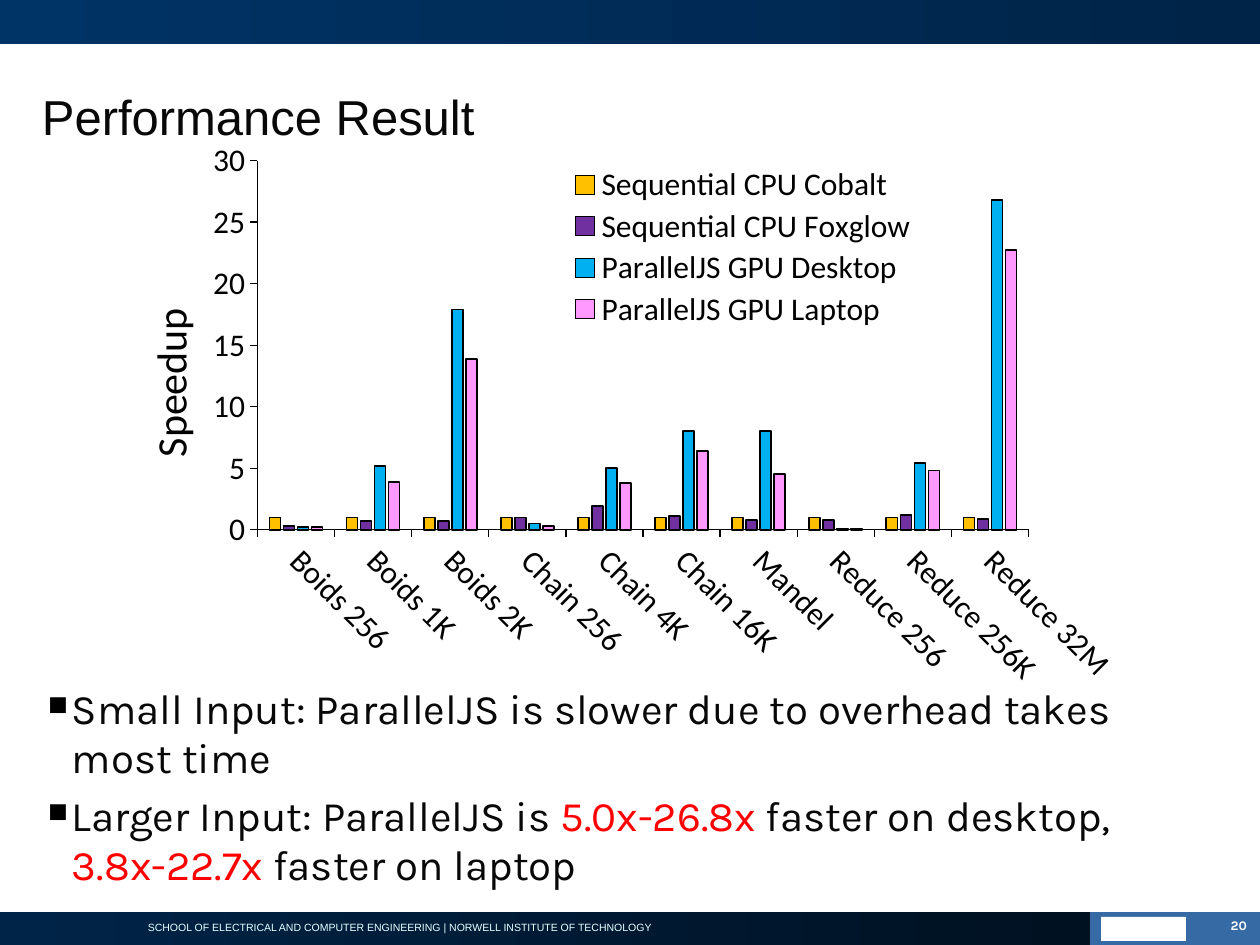
import dataclasses

import lxml.etree
import pptx
import pptx.chart.data
import pptx.dml.color
import pptx.enum.chart
import pptx.enum.shapes
import pptx.enum.text
import pptx.oxml.ns
import pptx.util

qn = pptx.oxml.ns.qn
EMU_PER_PX = 914400 / 126


@dataclasses.dataclass(frozen=True)
class Theme:
    text_font: str = "Karla"
    title_font: str = "Arial"
    chart_font: str = "Calibri"
    ink: str = "080808"
    black: str = "000000"
    white: str = "FFFFFF"
    accent: str = "FF0000"
    footer_text: str = "E5FFFF"
    badge: str = "366AA4"
    header_bar: tuple = ("003366", "002448")
    footer_bar: tuple = ("002448", "001121")
    series: tuple = ("FFC000", "7030A0", "00B0F0", "FF99FF")
    title_size: float = 28
    body_size: float = 24
    axis_title_size: float = 24
    chart_size: float = 18
    footer_size: float = 6
    number_size: float = 7.5


THEME = Theme()

CATEGORIES = ("Boids 256", "Boids 1K", "Boids 2K", "Chain 256", "Chain 4K",
              "Chain 16K", "Mandel", "Reduce 256", "Reduce 256K", "Reduce 32M")
SPEEDUPS = {
    "Sequential CPU Cobalt": (1, 1, 1, 1, 1, 1, 1, 1, 1, 1),
    "Sequential CPU Foxglow": (0.3, 0.7, 0.7, 1, 1.9, 1.1, 0.8, 0.8, 1.2, 0.9),
    "ParallelJS GPU Desktop": (0.2, 5.2, 17.9, 0.5, 5, 8, 8, 0.1, 5.4, 26.8),
    "ParallelJS GPU Laptop": (0.2, 3.9, 13.9, 0.3, 3.8, 6.4, 4.5, 0.1, 4.8, 22.7),
}
# Each finding is a list of (text, is highlighted)
FINDINGS = (
    (("Small Input: ParallelJS is slower due to overhead takes most time", False),),
    (("Larger Input: ParallelJS is ", False), ("5.0x-26.8x", True),
     (" faster on desktop, ", False), ("3.8x-22.7x", True),
     (" faster on laptop", False)),
)


def px(length):
    return pptx.util.Emu(round(length * EMU_PER_PX))


def rgb(color):
    return pptx.dml.color.RGBColor.from_string(color)


def set_font(font, name, size, color, bold=False):
    font.name = name
    font.size = pptx.util.Pt(size)
    font.color.rgb = rgb(color)
    font.bold = bold


def add_bar(slide, box, *colors):
    """Rectangle with one flat colour, or two blended from left to right."""
    bar = slide.shapes.add_shape(
        pptx.enum.shapes.MSO_SHAPE.RECTANGLE, *map(px, box))
    bar.shadow.inherit = False
    bar.line.fill.background()
    if len(colors) == 1:
        bar.fill.solid()
        bar.fill.fore_color.rgb = rgb(colors[0])
        return
    bar.fill.gradient()
    bar.fill.gradient_angle = 0
    for stop, color in zip(bar.fill.gradient_stops, colors):
        stop.color.rgb = rgb(color)


def add_text_frame(slide, box, margins=(0, 0), wrap=True):
    frame = slide.shapes.add_textbox(*map(px, box)).text_frame
    frame.word_wrap = wrap
    frame.margin_left = frame.margin_right = px(margins[0])
    frame.margin_top = frame.margin_bottom = px(margins[1])
    return frame


def add_title(slide, box):
    frame = add_text_frame(slide, box)
    frame.vertical_anchor = pptx.enum.text.MSO_ANCHOR.MIDDLE
    title = frame.paragraphs[0]
    title.text = "Performance Result"
    title.line_spacing = 0.93
    set_font(title.font, THEME.title_font, THEME.title_size, THEME.ink)


def set_bullet(paragraph):
    properties = paragraph._p.get_or_add_pPr()
    properties.set("marL", str(px(24)))
    properties.set("indent", str(px(-25)))
    color = lxml.etree.SubElement(properties, qn("a:buClr"))
    lxml.etree.SubElement(color, qn("a:srgbClr"), val=THEME.black)
    lxml.etree.SubElement(properties, qn("a:buSzPct"), val="65000")
    lxml.etree.SubElement(properties, qn("a:buChar"), char="■")


def add_findings(slide, box):
    frame = add_text_frame(slide, box)
    for index, parts in enumerate(FINDINGS):
        finding = frame.add_paragraph() if index else frame.paragraphs[0]
        set_bullet(finding)
        finding.line_spacing = 0.98
        finding.space_before = pptx.util.Pt(4.5)
        set_font(finding.font, THEME.text_font, THEME.body_size, THEME.ink)
        for text, highlighted in parts:
            run = finding.add_run()
            run.text = text
            if highlighted:
                run.font.color.rgb = rgb(THEME.accent)


def set_layout(parent, position, inner=False, **fractions):
    """Fix a chart part's place, as fractions of the chart's box."""
    for old in parent.findall(qn("c:layout")):
        parent.remove(old)
    layout = parent.makeelement(qn("c:layout"))
    manual = lxml.etree.SubElement(layout, qn("c:manualLayout"))
    if inner:
        lxml.etree.SubElement(manual, qn("c:layoutTarget"), val="inner")
    for side in ("x", "y"):
        lxml.etree.SubElement(manual, qn(f"c:{side}Mode"), val="edge")
    for side, fraction in fractions.items():
        lxml.etree.SubElement(manual, qn(f"c:{side}"), val=str(fraction))
    parent.insert(position, layout)


def add_speedup_chart(slide, box):
    data = pptx.chart.data.CategoryChartData()
    data.categories = CATEGORIES
    for name, values in SPEEDUPS.items():
        data.add_series(name, values)
    chart = slide.shapes.add_chart(
        pptx.enum.chart.XL_CHART_TYPE.COLUMN_CLUSTERED, *map(px, box), data).chart
    chart.has_title = False
    set_font(chart.font, THEME.chart_font, THEME.chart_size, THEME.black)
    set_layout(chart._chartSpace.chart.plotArea, 0, inner=True,
               x=0.146, y=0.087, w=0.729, h=0.589)

    # Columns
    columns = chart.plots[0]
    columns.vary_by_categories = False
    columns.gap_width = 219
    columns.overlap = -27
    for series, color in zip(columns.series, THEME.series):
        series.format.fill.solid()
        series.format.fill.fore_color.rgb = rgb(color)
        series.format.line.color.rgb = rgb(THEME.black)
        series.format.line.width = pptx.util.Pt(1)

    # Axes
    benchmarks, speedup = chart.category_axis, chart.value_axis
    for axis in (benchmarks, speedup):
        axis.has_major_gridlines = False
        axis.major_tick_mark = pptx.enum.chart.XL_TICK_MARK.OUTSIDE
        axis.format.line.color.rgb = rgb(THEME.black)
        axis.format.line.width = pptx.util.Pt(0.75)
        set_font(axis.tick_labels.font, THEME.chart_font, THEME.chart_size, THEME.black)
    benchmarks._element.find(qn("c:txPr")).find(qn("a:bodyPr")).set("rot", "2700000")
    speedup.minimum_scale, speedup.maximum_scale, speedup.major_unit = 0, 30, 5
    caption = speedup.axis_title.text_frame
    caption.text = "Speedup"
    caption._txBody.find(qn("a:bodyPr")).set("rot", "-5400000")
    set_font(caption.paragraphs[0].font, THEME.chart_font,
             THEME.axis_title_size, THEME.black)
    set_layout(speedup.axis_title._element, 1, x=0.03, y=0.31)

    # Legend over the empty middle of the plot
    chart.has_legend = True
    chart.legend.include_in_layout = False
    set_font(chart.legend.font, THEME.chart_font, THEME.chart_size, THEME.black)
    set_layout(chart.legend._element, 1, x=0.44, y=0.09, w=0.33, h=0.27)


def add_footer(slide, box):
    left, top, width, height = box
    badge_left = left + 1089
    add_bar(slide, (badge_left, top, width - 1089, height), THEME.badge)
    add_bar(slide, (badge_left + 12, top + 5, 85, 24), THEME.white)
    add_bar(slide, (left, top, 1090, height), *THEME.footer_bar)

    school = add_text_frame(slide, (left + 137, top + 4, 525, 23), (9, 5), wrap=False)
    affiliation = school.paragraphs[0]
    affiliation.text = ("SCHOOL OF ELECTRICAL AND COMPUTER ENGINEERING | "
                        "NORWELL INSTITUTE OF TECHNOLOGY")
    affiliation.alignment = pptx.enum.text.PP_ALIGN.CENTER
    set_font(affiliation.font, THEME.title_font, THEME.footer_size, THEME.footer_text)

    number = add_text_frame(slide, (left + width - 71, top, 71, height), (13, 6))
    page = number.paragraphs[0]
    page.text = "20"
    page.alignment = pptx.enum.text.PP_ALIGN.RIGHT
    page.line_spacing = 0.98
    set_font(page.font, THEME.text_font, THEME.number_size, THEME.white, bold=True)


def main():
    deck = pptx.Presentation()
    deck.slide_width, deck.slide_height = px(1260), px(945)
    slide = deck.slides.add_slide(deck.slide_layouts[6])
    add_footer(slide, (0, 912, 1260, 33))
    add_bar(slide, (0, 0, 1260, 44), *THEME.header_bar)
    add_title(slide, (42, 53, 1172, 132))
    add_findings(slide, (48, 685, 1172, 215))
    add_speedup_chart(slide, (103, 106, 1058, 627))
    deck.save("out.pptx")


if __name__ == "__main__":
    main()
